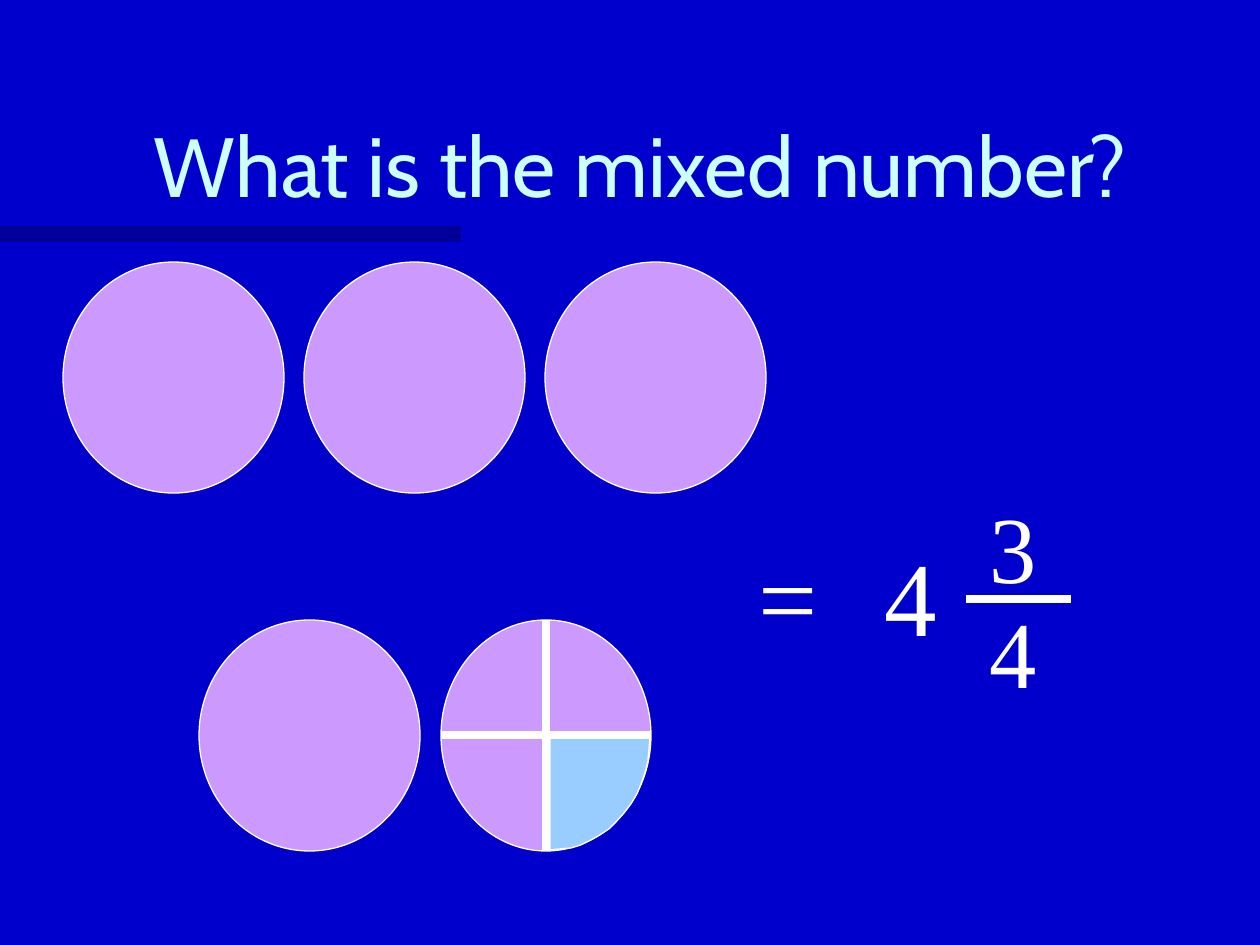
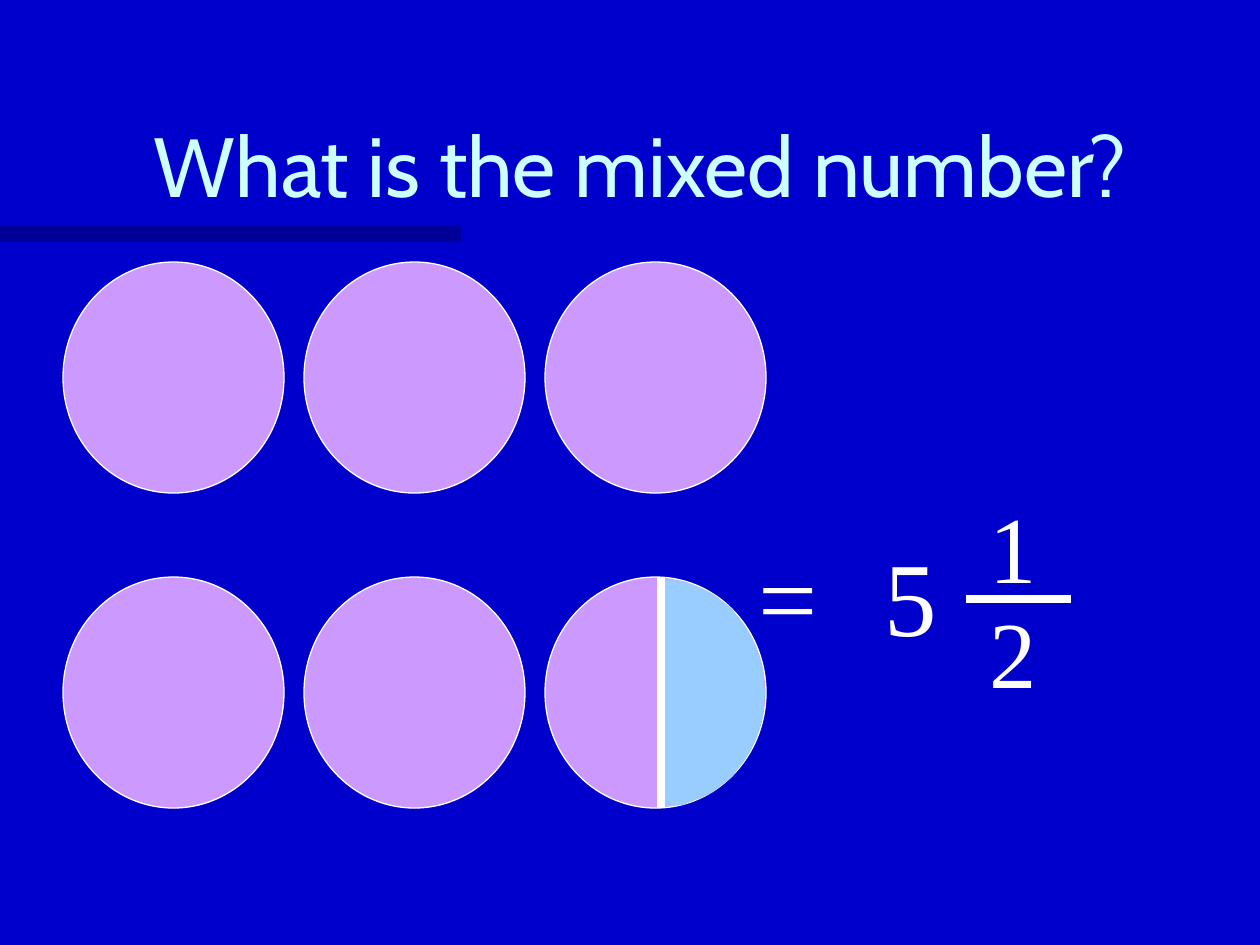
from math import cos, radians, sin

from lxml.etree import SubElement
from pptx import Presentation
from pptx.dml.color import RGBColor
from pptx.enum.shapes import MSO_CONNECTOR, MSO_SHAPE
from pptx.enum.text import MSO_ANCHOR, MSO_AUTO_SIZE, PP_ALIGN
from pptx.oxml.ns import qn
from pptx.util import Pt

# Content: whole circles, the divided circle and the mixed number.
# Boxes are (left, top, width, height) in px.
TITLE = "What is the mixed number?"
COLUMNS = [63 + 241 * column for column in range(3)]
TOP_ROW = [(left, 262) for left in COLUMNS]
QUESTIONS = [
    {
        "wholes": TOP_ROW + [(199, 620)],
        "divided": (441, 620, 210, 231),
        "dividers": [(546, 620, 546, 851), (441, 735, 651, 735)],
        "wedge": {"corner": (550, 738), "sweep": (0, 90), "outlined": True},
        "answer": ("4", "3", "4"),
    },
    {
        "wholes": TOP_ROW + [(left, 577) for left in COLUMNS[:2]],
        "divided": (COLUMNS[2], 577, 221, 231),
        "dividers": [(661, 577, 661, 808)],
        "wedge": {"corner": (661, 693), "sweep": (-90, 90), "outlined": False},
        "answer": ("5", "1", "2"),
    },
]

# Shared look
SCALE = 914400 / 126
BLUE, NAVY, PALE = "0000CC", "000066", "CCFFFF"
VIOLET, SKY, WHITE = "CC99FF", "99CCFF", "FFFFFF"
TITLE_FONT, NUMBER_FONT = "Cabin", "Times New Roman"
WHOLE_SIZE = (221, 231)
TITLE_BOX = (105, 63, 1071, 158)
BAND_BOX = (0, 226, 461, 16)
EQUALS_BOX = (746, 525, 84, 139)
WHOLE_BOX = (872, 525, 78, 139)
NUMERATOR_BOX = (977, 483, 73, 126)
DENOMINATOR_BOX = (977, 588, 73, 176)
FRACTION_BAR = (966, 599, 1071, 599)


def px(*lengths):
    return [round(length * SCALE) for length in lengths]


def color(code):
    return RGBColor.from_string(code)


def paint(shape, fill, outlined):
    shape.shadow.inherit = False
    shape.fill.solid()
    shape.fill.fore_color.rgb = color(fill)
    if outlined:
        shape.line.color.rgb = color(WHITE)
        shape.line.width = Pt(0.75)
    else:
        shape.line.fill.background()


def style(paragraph, font_name, size, code):
    paragraph.font.name = font_name
    paragraph.font.size = Pt(size)
    paragraph.font.color.rgb = color(code)


def add_band(slide):
    band = slide.shapes.add_shape(MSO_SHAPE.RECTANGLE, *px(*BAND_BOX))
    paint(band, NAVY, outlined=False)
    tint = band.fill._xPr.find(qn("a:solidFill"))[0]
    SubElement(tint, qn("a:alpha"), val="50000")


def add_title(slide):
    title = slide.shapes.title
    title.left, title.top, title.width, title.height = px(*TITLE_BOX)
    frame = title.text_frame
    frame.text = TITLE
    frame.auto_size = MSO_AUTO_SIZE.NONE
    frame.vertical_anchor = MSO_ANCHOR.BOTTOM
    frame.paragraphs[0].alignment = PP_ALIGN.CENTER
    style(frame.paragraphs[0], TITLE_FONT, 48, PALE)


def add_circle(slide, box):
    paint(slide.shapes.add_shape(MSO_SHAPE.OVAL, *px(*box)), VIOLET, outlined=True)


def add_rule(slide, ends):
    rule = slide.shapes.add_connector(MSO_CONNECTOR.STRAIGHT, *px(*ends))
    rule.line.color.rgb = color(WHITE)
    rule.line.width = Pt(4.5)
    SubElement(rule._element.spPr, qn("a:effectLst"))


def add_wedge(slide, circle, corner, sweep, outlined):
    # The arc runs about the corner and ends just inside the circle's rim
    left, top, width, height = circle
    x, y = corner
    reach_x, reach_y = left + width - 1 - x, top + height - 1 - y
    first, last = sweep
    arc = [
        (round(x + reach_x * cos(radians(angle))), round(y + reach_y * sin(radians(angle))))
        for angle in range(first, last + 1, 6)
    ]
    outline = slide.shapes.build_freeform(x, y, scale=SCALE)
    outline.add_line_segments(arc, close=True)
    paint(outline.convert_to_shape(), SKY, outlined)


def add_number(slide, text, box, size):
    frame = slide.shapes.add_textbox(*px(*box)).text_frame
    frame.text = text
    frame.word_wrap = False
    frame.auto_size = MSO_AUTO_SIZE.SHAPE_TO_FIT_TEXT
    style(frame.paragraphs[0], NUMBER_FONT, size, WHITE)


def add_answer(slide, whole, numerator, denominator):
    add_number(slide, "=", EQUALS_BOX, 60)
    add_number(slide, whole, WHOLE_BOX, 60)
    add_number(slide, numerator, NUMERATOR_BOX, 54)
    add_rule(slide, FRACTION_BAR)
    add_number(slide, denominator, DENOMINATOR_BOX, 54)


def main():
    deck = Presentation()
    deck.slide_width, deck.slide_height = px(1260, 945)
    backdrop = deck.slide_master.background.fill
    backdrop.solid()
    backdrop.fore_color.rgb = color(BLUE)
    title_only = deck.slide_layouts.get_by_name("Title Only")

    for question in QUESTIONS:
        slide = deck.slides.add_slide(title_only)
        add_band(slide)
        add_title(slide)
        for corner in question["wholes"]:
            add_circle(slide, corner + WHOLE_SIZE)
        add_circle(slide, question["divided"])
        add_wedge(slide, question["divided"], **question["wedge"])
        for divider in question["dividers"]:
            add_rule(slide, divider)
        add_answer(slide, *question["answer"])

    deck.save("out.pptx")


if __name__ == "__main__":
    main()
